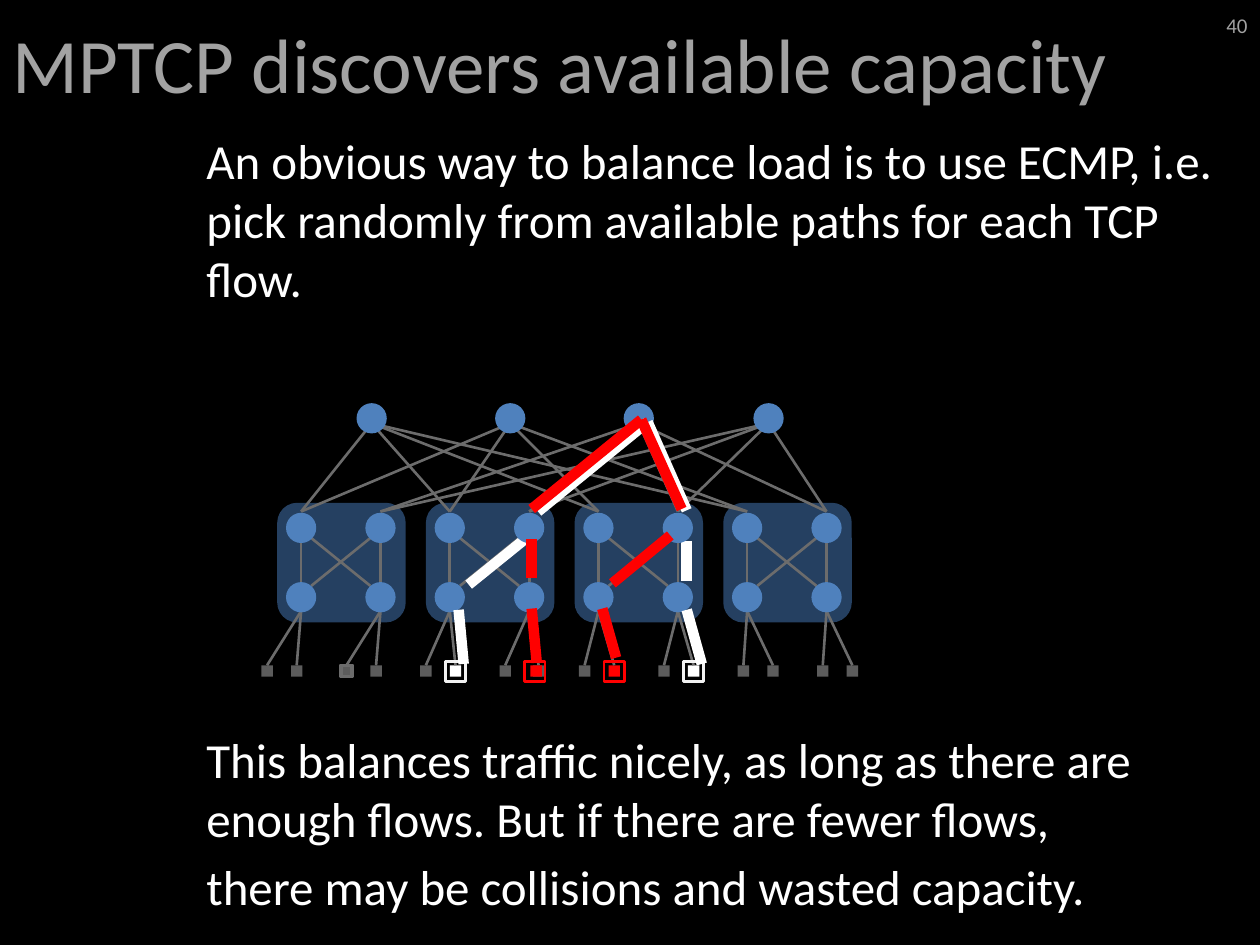
from itertools import product

from lxml.etree import SubElement
from pptx import Presentation
from pptx.dml.color import RGBColor
from pptx.enum.shapes import MSO_CONNECTOR as Link, MSO_SHAPE as Shape
from pptx.enum.text import MSO_ANCHOR as Anchor, PP_ALIGN as Align
from pptx.oxml.ns import qn
from pptx.util import Inches, Pt

# Content
TITLE = "MPTCP discovers available capacity"
PAGE = "40"
BODY = [  # text, space before in points
    ("An obvious way to balance load is to use ECMP, i.e. pick randomly "
     "from available paths for each TCP flow.", 0),
    ("This balances traffic nicely, as long as there are enough flows. "
     "But if there are fewer flows,", 241),
    ("there may be collisions and wasted capacity.", 5.6),
]
WHITE_FLOW = [  # from x, y to x, y
    (5.45, 4.05, 5.14, 3.35), (3.68, 5.27, 3.64, 4.84),
    (5.57, 5.27, 5.45, 4.84), (3.72, 4.64, 4.19, 4.26),
    (5.45, 4.61, 5.45, 4.29), (4.27, 4.06, 5.14, 3.35),
]
RED_FLOW = [
    (4.89, 5.22, 4.78, 4.83), (4.86, 4.63, 5.32, 4.25),
    (5.41, 4.04, 5.09, 3.33), (4.26, 5.26, 4.22, 4.83),
    (4.22, 4.59, 4.22, 4.28), (4.22, 4.04, 5.09, 3.33),
]

THEME = {
    "font": "Calibri", "title": 44, "body": 28, "page": 12,
    "back": "000000", "heading": "A2A2A2", "text": "FFFFFF",
    "pod": "254061", "switch": "4F81BD", "link": "6C6C6C", "server": "5C5C5C",
    "white": "FFFFFF", "white ring": "F2F2F2", "red": "FF0000",
    "thin": 1.5, "edge": 2, "thick": 6,
}

# Network grid, in inches
PODS, SIDES = range(4), range(2)
POD_LEFT, POD_TOP, POD_PITCH, POD_W, POD_H = 2.2, 3.99, 1.18, 1.02, 0.95
SIDE_PITCH = 0.63
CORE_X = [2.95, 4.05, 5.07, 6.1]
CORE_Y, AGG_Y, EDGE_Y, SERVER_Y = 3.32, 4.19, 4.74, 5.325
SWITCH, SERVER, RING = 0.24, 0.09, 0.16
# Servers are keyed by pod, side and place under the switch
OUTLINED = (0, 1, 0)
WHITE_ENDS = [(1, 0, 1), (2, 1, 1)]
RED_OVERLAY, RED_END = (1, 1, 1), (2, 0, 1)

deck = Presentation()
deck.slide_width, deck.slide_height = Inches(10), Inches(7.5)
slide = deck.slides.add_slide(deck.slide_layouts[6])
slide.background.fill.solid()
slide.background.fill.fore_color.rgb = RGBColor.from_string(THEME["back"])


def color(role):
    return RGBColor.from_string(THEME[role])


def add_text(box, paragraphs, size, role, anchor, align=Align.LEFT):
    frame = slide.shapes.add_textbox(*map(Inches, box)).text_frame
    frame.word_wrap, frame.vertical_anchor = True, anchor
    for number, (words, gap) in enumerate(paragraphs):
        line = frame.add_paragraph() if number else frame.paragraphs[0]
        line.alignment, line.space_before = align, Pt(gap)
        run = line.add_run()
        run.text = words
        look = {"name": THEME["font"], "size": Pt(THEME[size])}
        for key, value in look.items():
            setattr(run.font, key, value)
        run.font.color.rgb = color(role)


def add_block(kind, x, y, width, height, fill=None, line=None, weight="thin"):
    """Place a shape by its centre."""
    block = slide.shapes.add_shape(
        kind, *map(Inches, (x - width / 2, y - height / 2, width, height)))
    block.shadow.inherit = False
    if fill:
        block.fill.solid()
        block.fill.fore_color.rgb = color(fill)
    else:
        block.fill.background()
    if line:
        block.line.color.rgb = color(line)
        block.line.width = Pt(THEME[weight])
    else:
        block.line.fill.background()
    return block


def add_link(ends, role="link", weight="thin"):
    link = slide.shapes.add_connector(Link.STRAIGHT, *map(Inches, ends))
    link.line.color.rgb = color(role)
    link.line.width = Pt(THEME[weight])
    SubElement(link._element.spPr, qn("a:effectLst"))
    return link


def switch_x(pod, side):
    return POD_LEFT + 0.19 + pod * POD_PITCH + side * SIDE_PITCH


def server_x(pod, side, place):
    return 2.12 + pod * 2 * SIDE_PITCH + side * SIDE_PITCH + place * 0.235


def add_switches(centres, y):
    for x in centres:
        add_block(Shape.OVAL, x, y, SWITCH, SWITCH, "switch")


def add_ring(server, role):
    add_block(Shape.RECTANGLE, server_x(*server), SERVER_Y + 0.005,
              RING, RING, line=role)


# Pods
for pod in PODS:
    add_block(Shape.ROUNDED_RECTANGLE, POD_LEFT + pod * POD_PITCH + POD_W / 2,
              POD_TOP + POD_H / 2, POD_W, POD_H, "pod")

# Title, body and page number
add_text((0, 0, 10, 0.99), [(TITLE, 0)], "title", "heading", Anchor.MIDDLE)
add_text((1.54, 0.99, 8.46, 6.51), BODY, "body", "text", Anchor.TOP)
add_text((9.17, 0, 0.83, 0.4), [(PAGE, 0)], "page", "heading",
         Anchor.MIDDLE, Align.RIGHT)

# Links from switches to cores and within pods
switches = list(product(PODS, SIDES))
for pod, side in switches:
    x, across = switch_x(pod, side), switch_x(pod, 1 - side)
    for core in CORE_X[2 * side:2 * side + 2]:
        add_link((x, 4.06, core, 3.36))
    add_link((x, 4.62, x, 4.3))
    inset = 0.08 if side == 0 else -0.08
    add_link((x + inset, 4.65, across - inset, 4.27))

# Servers, each joined to its edge switch
fills = dict.fromkeys(WHITE_ENDS, "white") | {RED_END: "red"}
for server in product(PODS, SIDES, SIDES):
    x = server_x(*server) + (0.03 if server == RED_OVERLAY else 0)
    square = add_block(Shape.RECTANGLE, x, SERVER_Y, SERVER, SERVER,
                       fills.get(server, "server"),
                       "link" if server == OUTLINED else None, "edge")
    link = add_link((x, 5.28, switch_x(*server[:2]), 4.85))
    link.begin_connect(square, 0)

# Switches, with the white flow passing under the aggregation layer
columns = [switch_x(*switch) for switch in switches]
add_switches(columns, EDGE_Y)
add_switches(CORE_X, CORE_Y)
for server in WHITE_ENDS:
    add_ring(server, "white ring")
for segment in WHITE_FLOW:
    add_link(segment, "white", "thick")
add_switches(columns, AGG_Y)

# Red flow on top
add_block(Shape.RECTANGLE, server_x(*RED_OVERLAY) + 0.01, SERVER_Y,
          SERVER, SERVER, "red")
for segment in RED_FLOW:
    add_link(segment, "red", "thick")
for server in (RED_END, RED_OVERLAY):
    add_ring(server, "red")

deck.save("out.pptx")
